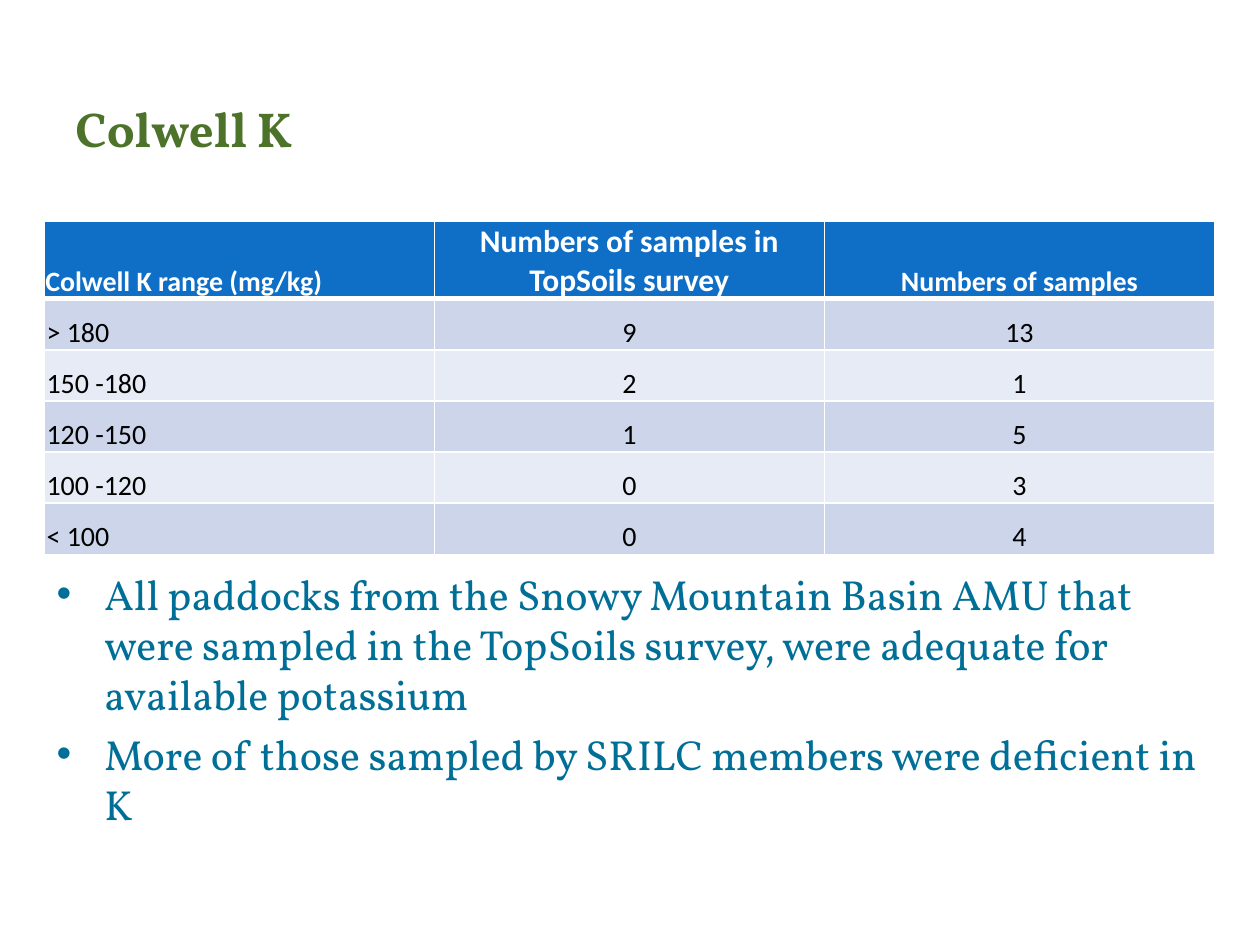
"""Build the Colwell K slide: a title, a table of sample counts and two bullets."""
from lxml.etree import SubElement as Sub
from pptx import Presentation
from pptx.dml.color import RGBColor
from pptx.enum.text import MSO_ANCHOR as Anchor, PP_ALIGN as Align
from pptx.oxml.ns import qn
from pptx.util import Inches, Pt

TITLE = "Colwell K"
HEADS = [("Colwell K range (mg/kg)", 16),
         ("Numbers of samples in TopSoils survey", 18),
         ("Numbers of samples", 16)]
ROWS = [("> 180", 9, 13),
        ("150 -180", 2, 1),
        ("120 -150", 1, 5),
        ("100 -120", 0, 3),
        ("< 100", 0, 4)]
POINTS = ["All paddocks from the Snowy Mountain Basin AMU that were sampled "
          "in the TopSoils survey, were adequate for available potassium",
          "More of those sampled by SRILC members were deficient in K"]
BANDS = ["CCD5EA", "E7EBF5"]
LEFT, WIDE = 0.35, 9.29
TOP, HIGH, HEAD = 1.76, 2.64, 0.61


def color(code):
    return RGBColor.from_string(code)


def style(para, size, name, code, bold=False):
    font = para.font
    font.size, font.name, font.bold = Pt(size), name, bold
    font.color.rgb = color(code)


def add_box(slide, left, top, width, height, anchor):
    box = slide.shapes.add_textbox(*map(Inches, (left, top, width, height)))
    frame = box.text_frame
    frame.word_wrap = True
    frame.vertical_anchor = anchor
    return frame


def add_edges(cell, top, base):
    props = cell._tc.get_or_add_tcPr()
    for side, size in zip("LRTB", (1, 1, top, base)):
        line = Sub(props, qn(f"a:ln{side}"), w=str(Pt(size)))
        Sub(Sub(line, qn("a:solidFill")), qn("a:srgbClr"), val="FFFFFF")


def fill_cell(cell, text, col, size, row):
    head = row == 0
    add_edges(cell, 3 if row == 1 else 1, 3 if head else 1)
    cell.fill.solid()
    cell.fill.fore_color.rgb = color("0F6FC6" if head else BANDS[(row - 1) % 2])
    cell.vertical_anchor = Anchor.BOTTOM
    cell.margin_left = cell.margin_right = Inches(0.01 if head else 0.02)
    cell.margin_top, cell.margin_bottom = Inches(0.01), 0
    para = cell.text_frame.paragraphs[0]
    para.text = str(text)
    para.alignment = Align.CENTER if col else Align.LEFT
    style(para, size, "Calibri", "FFFFFF" if head else "000000", head)


def add_grid(slide):
    lines = [HEADS] + [[(text, 16) for text in row] for row in ROWS]
    place = map(Inches, (LEFT, TOP, WIDE, HIGH))
    table = slide.shapes.add_table(len(lines), len(HEADS), *place).table
    for col in table.columns:
        col.width = Inches(WIDE / len(HEADS))
    for r, line in enumerate(lines):
        table.rows[r].height = Inches((HIGH - HEAD) / len(ROWS) if r else HEAD)
        for c, (text, size) in enumerate(line):
            fill_cell(table.cell(r, c), text, c, size, r)


def add_points(slide):
    frame = add_box(slide, LEFT, 4.46, WIDE, 2.11, Anchor.TOP)
    for i, text in enumerate(POINTS):
        para = frame.add_paragraph() if i else frame.paragraphs[0]
        para.text = text
        props = para._p.get_or_add_pPr()
        props.set("marL", str(Inches(0.38)))
        props.set("indent", str(Inches(-0.38)))
        Sub(props, qn("a:buFont"), typeface="Arial")
        Sub(props, qn("a:buChar"), char="•")
        para.space_before = Pt(5 if i else 0)
        style(para, 24, "Vollkorn", "006F97")


def main():
    deck = Presentation()
    deck.slide_width, deck.slide_height = Inches(10), Inches(7.5)
    slide = deck.slides.add_slide(deck.slide_layouts[6])
    title = add_box(slide, 0.5, 0.48, 9, 1.07, Anchor.MIDDLE).paragraphs[0]
    title.text = TITLE
    style(title, 28, "Vollkorn", "4C7329", True)
    add_grid(slide)
    add_points(slide)
    deck.save("out.pptx")


if __name__ == "__main__":
    main()
